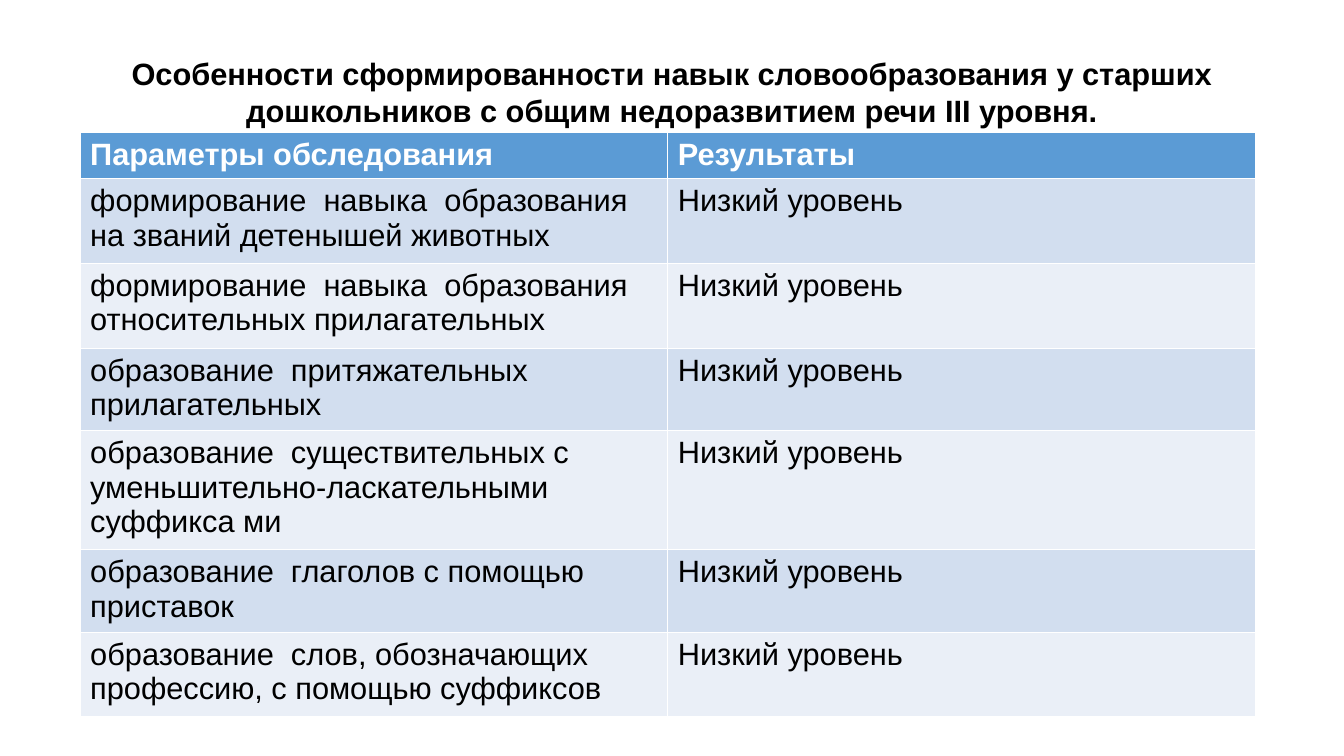
"""Build a slide with a table of word-formation skill results."""
from pptx import Presentation
from pptx.dml.color import RGBColor
from pptx.enum.text import MSO_ANCHOR, PP_ALIGN
from pptx.util import Pt

COLORS = {
    "header": "5B9BD5",
    "odd": "D2DEEF",
    "even": "EAEFF7",
    "dark": "000000",
    "light": "FFFFFF",
}
TITLE = (
    "Особенности сформированности навык словообразования у старших "
    "дошкольников с общим недоразвитием речи III уровня."
)
HEADER = ("Параметры обследования", "Результаты")
LEVEL = "Низкий уровень"
SKILLS = [
    ("формирование  навыка  образования на званий детенышей животных", 60.5),
    ("формирование  навыка  образования относительных прилагательных", 60.5),
    ("образование  притяжательных прилагательных", 59),
    ("образование  существительных с уменьшительно-ласкательными суффикса ми", 85),
    ("образование  глаголов с помощью приставок", 59),
    ("образование  слов, обозначающих профессию, с помощью суффиксов", 60.5),
]


def write_text(text_frame, text, color, bold):
    text_frame.text = text
    font = text_frame.paragraphs[0].runs[0].font
    for name, value in {"name": "Arial", "size": Pt(22), "bold": bold}.items():
        setattr(font, name, value)
    font.color.rgb = RGBColor.from_string(COLORS[color])


presentation = Presentation()
presentation.slide_width = Pt(960)
presentation.slide_height = Pt(540)
slide = presentation.slides.add_slide(presentation.slide_layouts[5])

title = slide.shapes.title
title_box = {"left": Pt(66), "top": Pt(28.75), "width": Pt(828), "height": Pt(73.5)}
for name, value in title_box.items():
    setattr(title, name, value)
write_text(title.text_frame, TITLE, "dark", True)
title.text_frame.vertical_anchor = MSO_ANCHOR.MIDDLE
title.text_frame.paragraphs[0].alignment = PP_ALIGN.CENTER

rows = [(HEADER, 33)] + [((skill, LEVEL), height) for skill, height in SKILLS]
table_height = sum(height for _, height in rows)
table = slide.shapes.add_table(
    len(rows), len(HEADER), Pt(57.25), Pt(94.75), Pt(839.5), Pt(table_height)
).table

for row_index, (texts, height) in enumerate(rows):
    table.rows[row_index].height = Pt(height)
    is_header = row_index == 0
    fill = "header" if is_header else ("even", "odd")[row_index % 2]
    for column_index, text in enumerate(texts):
        cell = table.cell(row_index, column_index)
        cell.fill.solid()
        cell.fill.fore_color.rgb = RGBColor.from_string(COLORS[fill])
        write_text(cell.text_frame, text, "light" if is_header else "dark", is_header)

presentation.save("out.pptx")
